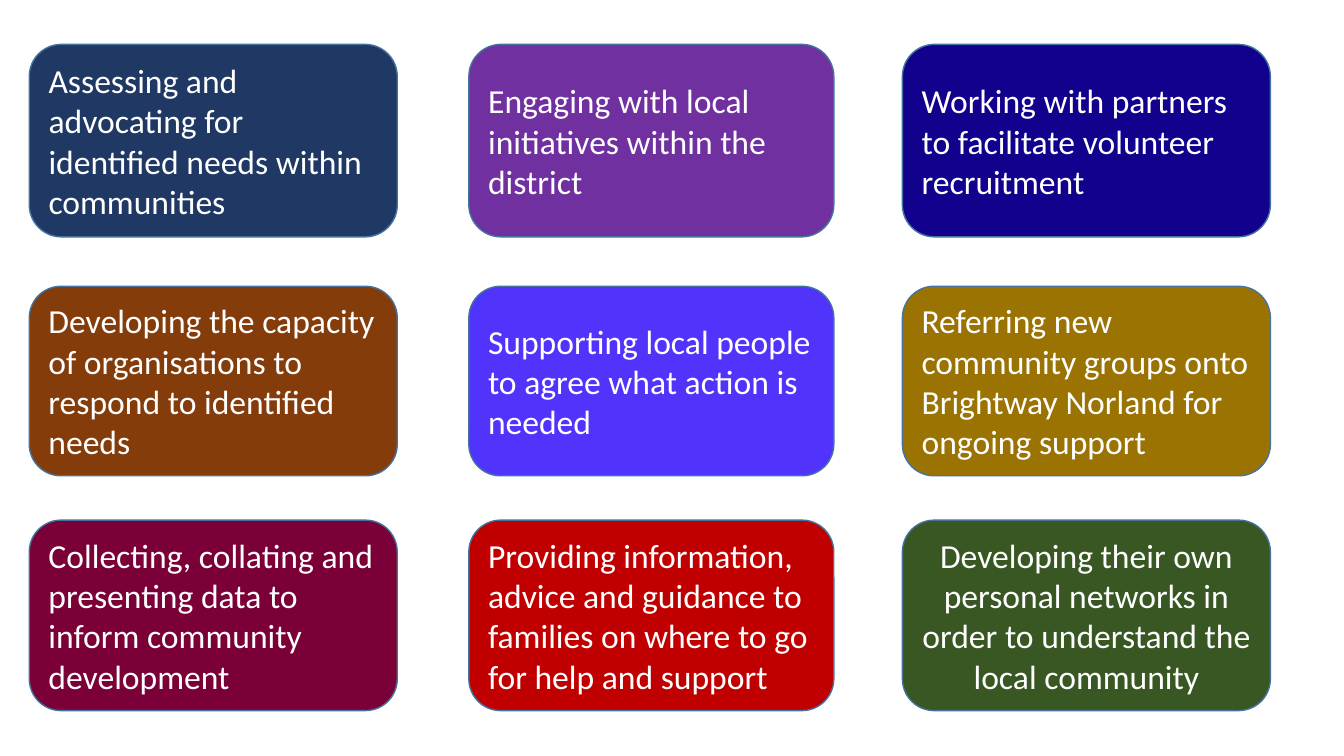
from pptx import Presentation
from pptx.dml.color import RGBColor
from pptx.enum.shapes import MSO_SHAPE
from pptx.enum.text import MSO_ANCHOR, PP_ALIGN
from pptx.util import Inches, Pt

COLUMNS = [(0.29, 3.65), (4.65, 3.62), (8.95, 3.65)]  # left, width
ROWS = [(0.44, 1.91), (2.84, 1.88), (5.16, 1.89)]  # top, height
LEFT, CENTER = PP_ALIGN.LEFT, PP_ALIGN.CENTER

# Cards run row by row: text, fill, alignment
CARDS = [
    ("Assessing and advocating for identified needs within communities", "203864", LEFT),
    ("Engaging with local initiatives within the district", "7030A0", LEFT),
    ("Working with partners to facilitate volunteer recruitment", "12018D", LEFT),
    ("Developing the capacity of organisations to respond to identified needs", "843C0B", LEFT),
    ("Supporting local people to agree what action is needed", "5134FC", LEFT),
    ("Referring new community groups onto Brightway Norland for ongoing support", "9B7303", LEFT),
    ("Collecting, collating and presenting data to inform community development", "7A0037", LEFT),
    ("Providing information, advice and guidance to families on where to go for help and support",
     "C00000", LEFT),
    ("Developing their own personal networks in order to understand the local community",
     "385723", CENTER),
]


def paint(fmt, color):
    """Give a fill a solid colour."""
    fmt.solid()
    fmt.fore_color.rgb = RGBColor.from_string(color)


prs = Presentation()
prs.slide_width, prs.slide_height = Inches(13.33), Inches(7.5)
s = prs.slides.add_slide(prs.slide_layouts[6])

for i, (text, fill, align) in enumerate(CARDS):
    row, col = divmod(i, len(COLUMNS))
    left, width = COLUMNS[col]
    top, height = ROWS[row]
    sp = s.shapes.add_shape(MSO_SHAPE.ROUNDED_RECTANGLE, Inches(left), Inches(top),
                            Inches(width), Inches(height))
    sp.shadow.inherit = False
    paint(sp.fill, fill)
    paint(sp.line.fill, "43739E")
    sp.line.width = Pt(1)

    tf = sp.text_frame
    tf.word_wrap = True
    tf.vertical_anchor = MSO_ANCHOR.MIDDLE
    p = tf.paragraphs[0]
    p.alignment = align
    r = p.add_run()
    r.text = text
    r.font.name = "Calibri"
    r.font.size = Pt(24)
    paint(r.font.fill, "FFFFFF")

prs.save("out.pptx")
